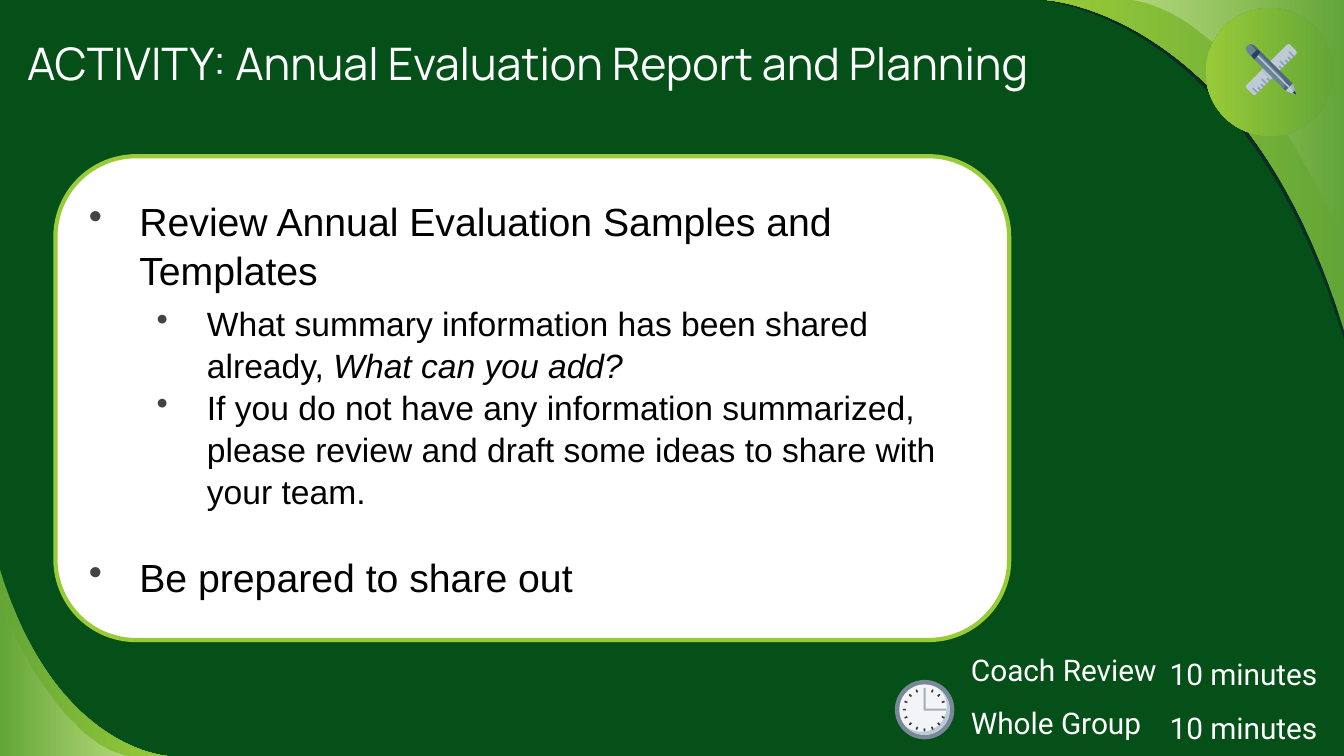
from math import cos, radians, sin

from pptx import Presentation
from pptx import util as u
from pptx.dml.color import RGBColor
from pptx.enum import shapes, text
from pptx.oxml.ns import qn
from pptx.oxml.xmlchemy import OxmlElement

CELL = u.Inches(0.01)
COLUMNS, ROWS = 1333, 750
LIME, LEAF, WHITE, BLACK = "99CB38", "63A537", "FFFFFF", "000000"
OVAL = shapes.MSO_SHAPE.OVAL
BAR = shapes.MSO_SHAPE.RECTANGLE
PILL = shapes.MSO_SHAPE.ROUNDED_RECTANGLE
hue = RGBColor.from_string

deck = Presentation()
deck.slide_width, deck.slide_height = COLUMNS * CELL, ROWS * CELL
slide = deck.slides.add_slide(deck.slide_layouts[5])
slide.background.fill.solid()
slide.background.fill.fore_color.rgb = hue("045018")


def draw(outline, *colours, turn=0, angle=0, alphas=()):
    if isinstance(outline, list):
        points = [(x * CELL, y * CELL) for x, y in outline]
        pen = slide.shapes.build_freeform(*points[0], scale=1.0)
        pen.add_line_segments(points[1:], close=True)
        part = pen.convert_to_shape()
    else:
        preset, x, y, wide, high = outline
        box = [round(n * CELL) for n in (x - wide / 2, y - high / 2, wide, high)]
        part = slide.shapes.add_shape(preset, *box)
    part.rotation = turn
    part.shadow.inherit = False
    part.line.fill.background()
    if len(colours) == 1:
        part.fill.solid()
        part.fill.fore_color.rgb = hue(colours[0])
    else:
        part.fill.gradient()
        part.fill.gradient_angle = angle
        for stop, colour in zip(part.fill.gradient_stops, colours):
            stop.color.rgb = hue(colour)
    for tint, share in zip(list(part._element.spPr.iter(qn("a:srgbClr"))), alphas):
        alpha = OxmlElement("a:alpha")
        alpha.set("val", str(share * 1000))
        tint.append(alpha)
    return part


def write(frame, wording, size, font="Arial", colour=BLACK, italic="", left=0, hang=0,
          bullet=None, spacing=1.0, before=0, after=0):
    line = frame.paragraphs[0] if not frame.text else frame.add_paragraph()
    line.alignment = text.PP_ALIGN.LEFT
    line.line_spacing = spacing
    line.space_before, line.space_after = u.Pt(before), u.Pt(after)
    settings = line._p.get_or_add_pPr()
    settings.set("marL", str(left * CELL))
    settings.set("indent", str(-hang * CELL))
    if bullet:
        tint, value, mark = [OxmlElement(tag) for tag in ("a:buClr", "a:srgbClr", "a:buChar")]
        value.set("val", "434343")
        tint.append(value)
        mark.set("char", bullet)
        settings.extend([tint, mark])
    for words, slanted in ((wording, False), (italic, True)):
        if words:
            run = line.add_run()
            run.text = words
            run.font.name, run.font.size = font, u.Pt(size)
            run.font.italic = slanted
            run.font.color.rgb = hue(colour)


corners = [
    ([(1333, 337), (1235, 11), (1031, 0), (1031, 0)], (1333, 0), ["12102F"], 0, [54]),
    ([(1038, 0), (1038, 0), (1238, 11), (1333, 328)], (1333, 0), [LEAF, LIME], 180, []),
    ([(1333, 244), (1333, 244), (1242, 15), (1118, 0)], (1333, 0), [WHITE, WHITE], 180, [0, 36]),
    ([(166, 750), (166, 750), (54, 744), (0, 565)], (0, 750), [LEAF, LIME], 0, []),
    ([(0, 601), (0, 601), (56, 741), (132, 750)], (0, 750), [WHITE, WHITE], 0, [0, 36]),
]
for curve, corner, colours, angle, alphas in corners:
    edge = []
    for step in range(41):
        t = step / 40
        weights = ((1 - t) ** 3, 3 * t * (1 - t) ** 2, 3 * t * t * (1 - t), t ** 3)
        edge.append(tuple(sum(w * p[axis] for w, p in zip(weights, curve)) for axis in (0, 1)))
    draw(edge + [corner], *colours, angle=angle, alphas=alphas)

title = slide.shapes.title
title.left, title.top, title.width, title.height = [n * CELL for n in (17, 25, 1146, 92)]
heading = title.text_frame
heading.word_wrap, heading.auto_size = True, text.MSO_AUTO_SIZE.NONE
heading.vertical_anchor = text.MSO_ANCHOR.TOP
heading.margin_left = heading.margin_right = heading.margin_top = heading.margin_bottom = 10 * CELL
write(heading, "ACTIVITY: Annual Evaluation Report and Planning", 32, "Manrope", WHITE)

draw((OVAL, 1259.5, 71.5, 127, 127), LEAF, LIME, angle=180)
draw((PILL, 1261, 69, 61, 13), "BECBD5", turn=-45)
for tick in range(13):
    long = tick % 3 == 0
    nudge = 0 if long else 1
    draw((BAR, 1245 + 3 * tick + nudge, 90 - 3 * tick + nudge, 7 if long else 4, 1.7),
         "88A1B4", turn=45)
draw((BAR, 1259, 71, 13, 10), "B2C2CE", turn=45)
pencil = [
    ([(1241, 44), (1237, 45), (1235.5, 48), (1237, 52), (1275, 90), (1282, 83), (1244, 45)], "6B8397"),
    ([(1282, 83), (1275, 90), (1285, 94), (1285.5, 93)], "BECBD5"),
    ([(1282, 83), (1280, 85), (1283, 93), (1285, 94), (1285.5, 93)], "9FB3C2"),
    ([(1241, 44), (1239, 44), (1241, 45), (1273, 78), (1275, 83), (1273, 88),
      (1275, 90), (1282, 83), (1244, 45)], "4E677C"),
    ([(1284, 90), (1282, 92), (1285, 94), (1285.5, 93)], "29435D"),
    ([(1247, 49), (1241, 55), (1244, 59), (1250, 52)], "29435D"),
    ([(1248, 55), (1247, 56), (1278, 87), (1279, 86)], "BECBD5"),
]
for outline, colour in pencil:
    draw(outline, colour)

card = draw((PILL, 528, 395, 946, 480), WHITE)
card.line.color.rgb = hue(LIME)
card.line.width = u.Pt(3)
tasks = card.text_frame
tasks.word_wrap = True
tasks.vertical_anchor = text.MSO_ANCHOR.MIDDLE
task = dict(size=28, left=50, hang=50, bullet="•", spacing=1.04)
detail = task | dict(size=24, left=117)
write(tasks, "Review Annual Evaluation Samples and Templates", after=6, **task)
write(tasks, "What summary information has been shared already, ",
      italic="What can you add?", **detail)
write(tasks, "If you do not have any information summarized, please review and draft "
      "some ideas to share with your team.", **detail)
write(tasks, "Be prepared to share out", before=29, **task)

clock_x, clock_y = 917, 704
for size, colour in ((59, "798898"), (50, "F2F4F7")):
    draw((OVAL, clock_x, clock_y, size, size), colour)
draw((PILL, clock_x, clock_y - 10.5, 2, 22), "A3ADB8")
draw((PILL, clock_x + 10.5, clock_y, 22, 2), "A3ADB8")
rim = [(clock_x + 25 * cos(radians(a)), clock_y + 25 * sin(radians(a))) for a in range(-50, 141, 5)]
inner = [(clock_x - 3 + 25 * cos(radians(a)), clock_y - 3 + 25 * sin(radians(a)))
         for a in range(130, -41, -5)]
draw(rim + inner, "BCCAD6")
for mark in range(1, 16):
    if mark != 12:
        turn = mark * 22.5
        draw((PILL, clock_x + 20 * cos(radians(turn)), clock_y + 20 * sin(radians(turn)), 3, 1.7),
             "3D3D3D", turn=turn)

timings = [
    ((1125, 638, 208, 96), ["10 minutes", "10 minutes"], 1.5, 0),
    ((928, 658, 265, 65), ["Coach Review", "Whole Group"], 1.0, 12),
]
for box, entries, spacing, after in timings:
    timing = slide.shapes.add_textbox(*[n * CELL for n in box]).text_frame
    timing.word_wrap = True
    timing.vertical_anchor = text.MSO_ANCHOR.MIDDLE
    timing.margin_left = timing.margin_right = timing.margin_top = timing.margin_bottom = 13 * CELL
    for entry in entries:
        write(timing, entry, 21.3, "Roboto", WHITE, left=22, spacing=spacing,
              after=after if entry == entries[0] else 0)

deck.save("out.pptx")
